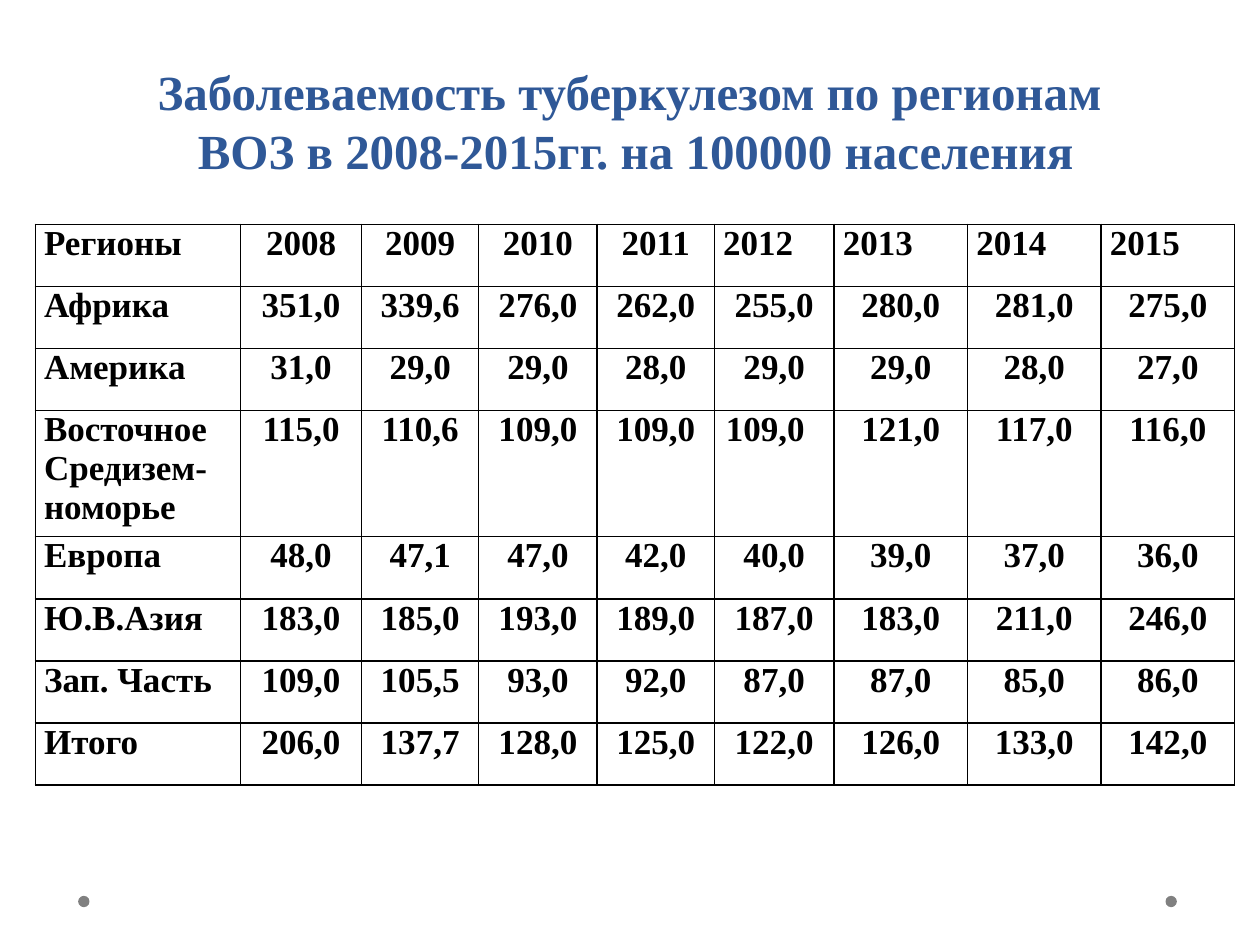
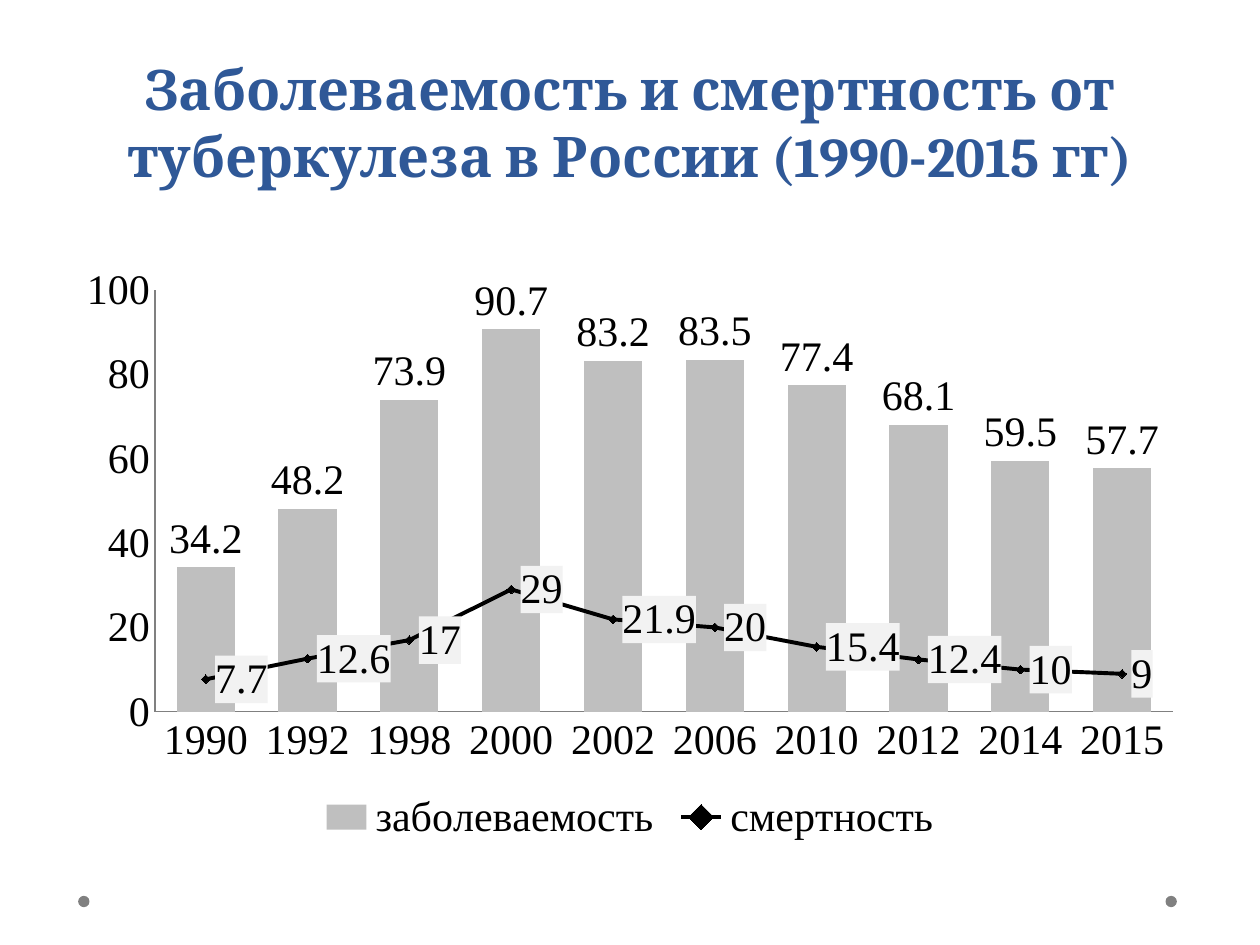
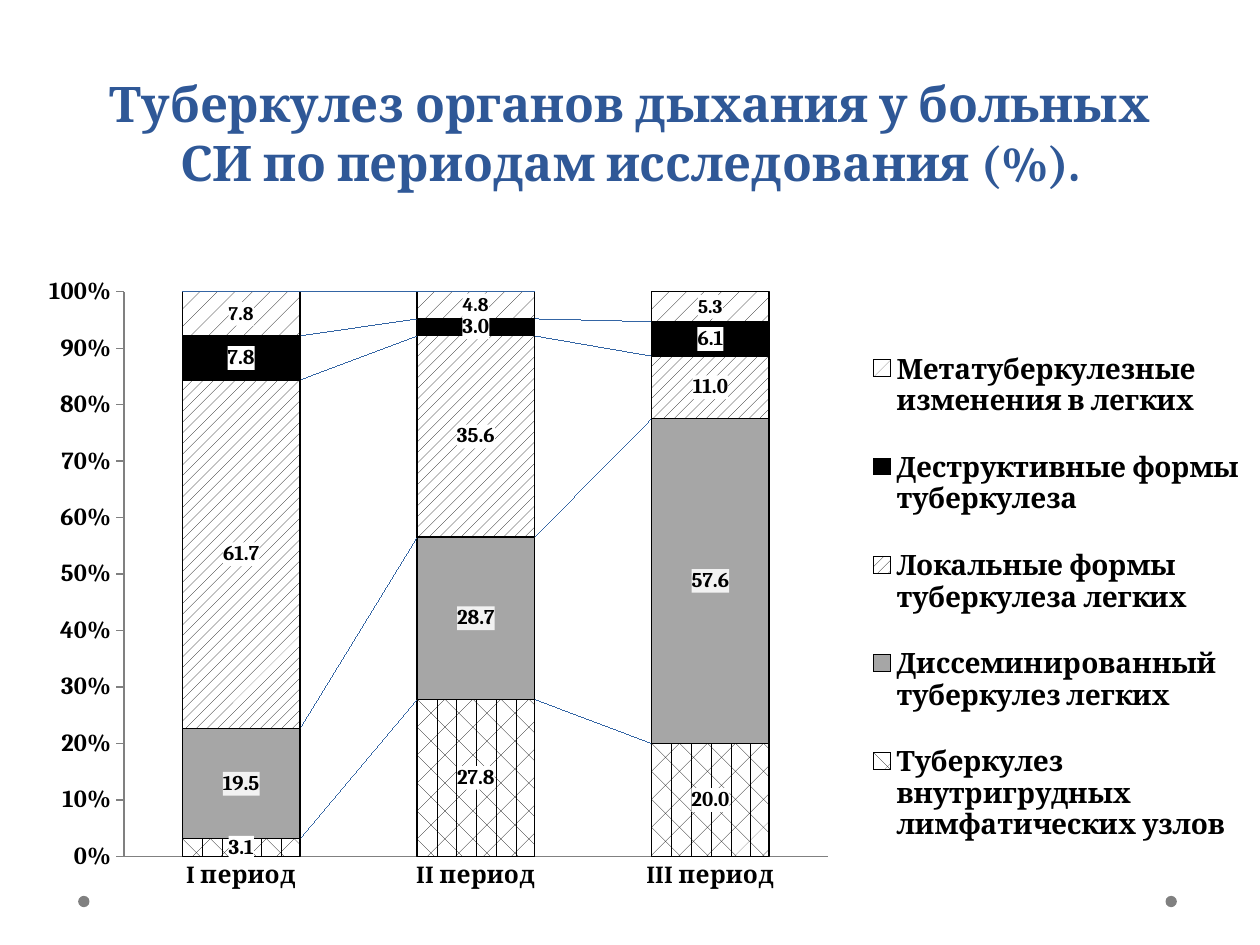
import pptx
import pptx.chart.data
import pptx.dml.color
import pptx.enum.chart
import pptx.enum.dml
import pptx.enum.shapes
import pptx.enum.text
import pptx.oxml
import pptx.oxml.ns
import pptx.util

Pt = pptx.util.Pt
Kind = pptx.enum.chart.XL_CHART_TYPE
Spot = pptx.enum.chart.XL_LABEL_POSITION
Side = pptx.enum.chart.XL_LEGEND_POSITION
Tick = pptx.enum.chart.XL_TICK_MARK
Hatch = pptx.enum.dml.MSO_PATTERN
Align = pptx.enum.text.PP_ALIGN

BLUE, BLACK, WHITE = "2F5897", "000000", "FFFFFF"
GREY, PALE = "808080", "F2F2F2"
TIMES, SERIF = "Times New Roman", "Cambria"

WIDTHS = [16.3, 9.6, 9.3, 9.4, 9.3, 9.5, 10.6, 10.6, 10.6]
YEARS = ["2008", "2009", "2010", "2011", "2012", "2013", "2014", "2015"]
RATES = [
    ["Регионы", *YEARS],
    ["Африка", "351,0", "339,6", "276,0", "262,0", "255,0", "280,0", "281,0", "275,0"],
    ["Америка", "31,0", "29,0", "29,0", "28,0", "29,0", "29,0", "28,0", "27,0"],
    ["Восточное\nСредизем-номорье", "115,0", "110,6", "109,0", "109,0", "109,0", "121,0", "117,0", "116,0"],
    ["Европа", "48,0", "47,1", "47,0", "42,0", "40,0", "39,0", "37,0", "36,0"],
    ["Ю.В.Азия", "183,0", "185,0", "193,0", "189,0", "187,0", "183,0", "211,0", "246,0"],
    ["Зап. Часть", "109,0", "105,5", "93,0", "92,0", "87,0", "87,0", "85,0", "86,0"],
    ["Итого", "206,0", "137,7", "128,0", "125,0", "122,0", "126,0", "133,0", "142,0"],
]

TREND = [
    ("заболеваемость", [34.2, 48.2, 73.9, 90.7, 83.2, 83.5, 77.4, 68.1, 59.5, 57.7]),
    ("смертность", [7.7, 12.6, 17, 29, 21.9, 20, 15.4, 12.4, 10, 9]),
]
TIMES_SEEN = ["1990", "1992", "1998", "2000", "2002", "2006", "2010", "2012", "2014", "2015"]

FORMS = [
    ("Туберкулез внутригрудных лимфатических узлов", [3.1, 27.8, 20]),
    ("Диссеминированный туберкулез легких", [19.5, 28.7, 57.6]),
    ("Локальные формы туберкулеза легких", [61.7, 35.6, 11]),
    ("Деструктивные формы туберкулеза", [7.8, 3, 6.1]),
    ("Метатуберкулезные изменения в легких", [7.8, 4.8, 5.3]),
]
LOOKS = [
    (Hatch.DIVOT, WHITE, 12),
    ("A6A6A6", PALE, 12),
    (Hatch.DASHED_UPWARD_DIAGONAL, WHITE, 12),
    (BLACK, WHITE, 12),
    (Hatch.PERCENT_5, WHITE, 11),
]


def unit(count):
    return pptx.util.Inches(count / 10)


def box(*cells):
    return [unit(cell) for cell in cells]


def hue(code):
    return pptx.dml.color.RGBColor.from_string(code)


def node(body):
    spaces = pptx.oxml.ns.nsdecls("a", "c")
    return pptx.oxml.parse_xml(body.replace(">", f" {spaces}>", 1))


def solid(code):
    return f'<a:solidFill><a:srgbClr val="{code}"/></a:solidFill>'


def style(font, size, name, color=BLACK, bold=False):
    font.size, font.name, font.bold = Pt(size), name, bold
    font.color.rgb = hue(color)


def text(frame, words, align=Align.CENTER, lead=None, **look):
    frame.word_wrap = True
    for i, line in enumerate(words.split("\n")):
        para = frame.add_paragraph() if i else frame.paragraphs[0]
        para.text = line
        para.alignment = align
        para.line_spacing = lead
        for run in para.runs:
            style(run.font, **look)


def page(deck, words, area, size, name):
    slide = deck.slides.add_slide(deck.slide_layouts[6])
    for left in (92.5, 6.2):
        dot = slide.shapes.add_shape(
            pptx.enum.shapes.MSO_SHAPE.OVAL, *box(left, 71.1, 0.9, 0.9))
        dot.shadow.inherit = False
        dot.fill.solid()
        dot.fill.fore_color.rgb = hue(GREY)
        dot.line.fill.background()
    frame = slide.shapes.add_textbox(*box(*area)).text_frame
    frame.vertical_anchor = pptx.enum.text.MSO_ANCHOR.BOTTOM
    text(frame, words, lead=Pt(1.2 * size), size=size, name=name, color=BLUE, bold=True)
    return slide


def frame_cell(cell):
    props = cell._tc.get_or_add_tcPr()
    for i, edge in enumerate(("lnL", "lnR", "lnT", "lnB")):
        props.insert(i, node(f'<a:{edge} w="12700">{solid(BLACK)}</a:{edge}>'))


def grid(slide, rows):
    table = slide.shapes.add_table(
        len(rows), len(WIDTHS), *box(2.8, 17.8, sum(WIDTHS), 43.6)).table
    table.first_row = table.horz_banding = False
    for column, width in zip(table.columns, WIDTHS):
        column.width = unit(width)
    for r, row in enumerate(rows):
        table.rows[r].height = unit(9.25 if "\n" in row[0] else 4.93)
        for c, words in enumerate(row):
            cell = table.cell(r, c)
            cell.fill.background()
            frame_cell(cell)
            cell.margin_left = cell.margin_right = unit(0.7)
            cell.margin_top = cell.margin_bottom = 0
            align = Align.JUSTIFY if c == 0 else Align.CENTER
            if r == 0 and c > 4:
                align = Align.LEFT
            text(cell.text_frame, words, align, size=20, name=TIMES, bold=True)
    table.cell(3, 5).margin_right = unit(2.1)


def plot(slide, kind, area, names, rows, size, font):
    data = pptx.chart.data.CategoryChartData()
    data.categories = names
    for name, values in rows:
        data.add_series(name, values)
    chart = slide.shapes.add_chart(kind, *box(*area), data).chart
    style(chart.font, size, font)
    chart.has_title = False
    chart.has_legend = True
    chart.legend.include_in_layout = False
    for axis in (chart.category_axis, chart.value_axis):
        axis.has_major_gridlines = False
        axis.major_tick_mark = axis.minor_tick_mark = Tick.NONE
        axis.format.line.color.rgb = hue(GREY)
        axis.format.line.width = Pt(0.75)
    chart.plots[0].vary_by_categories = False
    return chart


def scale(axis, top, step):
    axis.minimum_scale, axis.maximum_scale, axis.major_unit = 0, top, step


def label(series, size, font, back=None, spot=None, bold=False, form=None):
    marks = series.data_labels
    marks.show_value = True
    style(marks.font, size, font, bold=bold)
    if spot is not None:
        marks.position = spot
    if form:
        marks.number_format, marks.number_format_is_linked = form, False
    if back:
        text_part = series._element.xpath("c:dLbls/c:txPr")[0]
        text_part.addprevious(node(f"<c:spPr>{solid(back)}</c:spPr>"))


def paint(fill, look):
    if isinstance(look, str):
        fill.solid()
        fill.fore_color.rgb = hue(look)
    else:
        fill.patterned()
        fill.pattern = look
        fill.fore_color.rgb, fill.back_color.rgb = hue(BLACK), hue(WHITE)


def split(chart):
    bars = chart.element.xpath(".//c:barChart")[0]
    row = bars.xpath("c:ser")[1]
    for flag in row.xpath("c:invertIfNegative"):
        row.remove(flag)
    axes = "".join(f'<c:axId val="{key}"/>' for key in bars.xpath("c:axId/@val"))
    line = node('<c:lineChart><c:grouping val="stacked"/><c:varyColors val="0"/>'
                f'<c:marker val="1"/>{axes}</c:lineChart>')
    line.insert(2, row)
    bars.addnext(line)
    return chart.plots[1].series[0]


def place(part, slot, x, y, w, h, inner=False):
    for old in part.xpath("c:layout"):
        part.remove(old)
    target = '<c:layoutTarget val="inner"/>' if inner else ""
    modes = "".join(f'<c:{key}Mode val="edge"/>' for key in "xy")
    sizes = "".join(f'<c:{key} val="{share}"/>' for key, share in zip("xywh", (x, y, w, h)))
    part.insert(slot, node(
        f"<c:layout><c:manualLayout>{target}{modes}{sizes}</c:manualLayout></c:layout>"))


def trend(slide):
    chart = plot(slide, Kind.COLUMN_CLUSTERED, (5.1, 20.2, 89.8, 47.2),
                 TIMES_SEEN, TREND, 24, TIMES)
    chart.legend.position = Side.BOTTOM
    scale(chart.value_axis, 100, 20)
    chart.plots[0].gap_width = 75
    deaths = split(chart)
    cases = chart.plots[0].series[0]
    paint(cases.format.fill, "BFBFBF")
    label(cases, 24, TIMES, spot=Spot.OUTSIDE_END)
    deaths.smooth = False
    deaths.format.line.color.rgb = hue(BLACK)
    deaths.format.line.width = Pt(2.25)
    deaths.marker.style = pptx.enum.chart.XL_MARKER_STYLE.DIAMOND
    deaths.marker.size = 5
    paint(deaths.marker.format.fill, BLACK)
    deaths.marker.format.line.color.rgb = hue(BLACK)
    label(deaths, 24, TIMES, PALE, Spot.RIGHT)


def forms(slide):
    chart = plot(slide, Kind.COLUMN_STACKED_100, (2, 21, 98, 54),
                 ["I период", "II период", "III период"], FORMS, 10, SERIF)
    chart.legend.position = Side.RIGHT
    style(chart.legend.font, 16, SERIF, bold=True)
    for axis in (chart.category_axis, chart.value_axis):
        style(axis.tick_labels.font, 14, SERIF, bold=True)
    axis = chart.value_axis
    scale(axis, 1, 0.1)
    axis.major_tick_mark = Tick.OUTSIDE
    axis.tick_labels.number_format = "0%"
    axis.tick_labels.number_format_is_linked = False
    bars = chart.plots[0]
    bars.gap_width, bars.overlap = 100, 100
    for series, (look, back, size) in zip(bars.series, LOOKS):
        paint(series.format.fill, look)
        series.format.line.color.rgb = hue(BLACK)
        series.format.line.width = Pt(0.75)
        label(series, size, SERIF, back, bold=True, form="0.0")
    chart.element.xpath(".//c:barChart/c:overlap")[0].addnext(node(
        f'<c:serLines><c:spPr><a:ln w="9525">{solid(BLUE)}</a:ln></c:spPr></c:serLines>'))
    place(chart.element.xpath(".//c:plotArea")[0], 0, 0.08, 0.04, 0.57, 0.83, inner=True)
    place(chart.element.xpath(".//c:legend")[0], 1, 0.67, 0.08, 0.33, 0.82)


def main():
    deck = pptx.Presentation()
    deck.slide_width, deck.slide_height = box(100, 75)
    grid(page(deck, "Заболеваемость туберкулезом по регионам \vВОЗ в 2008-2015гг. на 100000 населения",
              (2.8, 2.9, 95.3, 11.8), 28, TIMES), RATES)
    trend(page(deck, "Заболеваемость и смертность от туберкулеза в России (1990-2015 гг)",
               (5, 2.9, 90, 12.6), 32, SERIF))
    forms(page(deck, "Туберкулез органов дыхания у больных СИ по периодам исследования (%).",
               (5, 0, 90, 15.7), 28, SERIF))
    deck.save("out.pptx")


if __name__ == "__main__":
    main()
